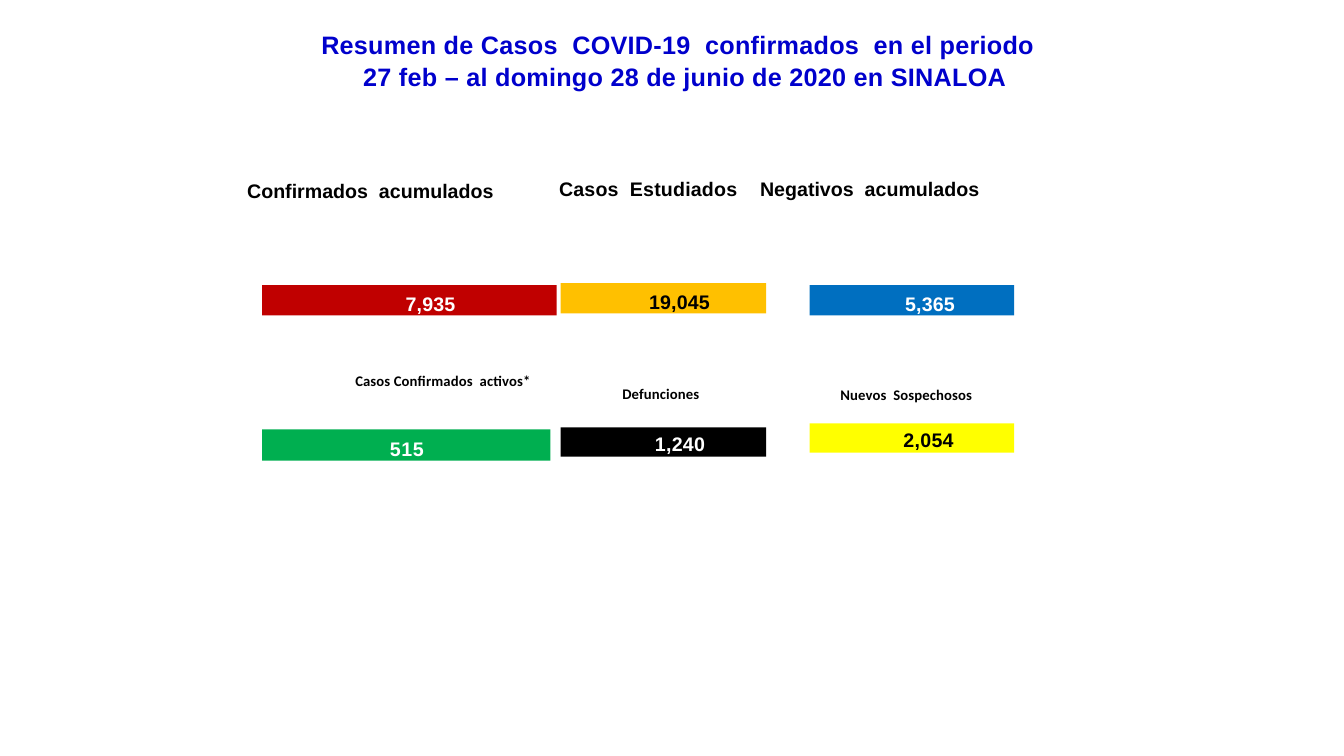
from pptx import Presentation
from pptx.dml.color import RGBColor
from pptx.enum.shapes import MSO_SHAPE as Shape
from pptx.enum.text import MSO_ANCHOR as Anchor, MSO_AUTO_SIZE as AutoSize, PP_ALIGN as Align
from pptx.util import Inches, Pt

BLACK, WHITE, TITLE_BLUE = "000000", "FFFFFF", "0000CC"


def rgb(hex_code):
    return RGBColor.from_string(hex_code)


def set_frame(frame, top_inset):
    frame.margin_left = frame.margin_right = frame.margin_bottom = 0
    frame.margin_top = Inches(top_inset)
    frame.vertical_anchor = Anchor.TOP
    frame.word_wrap = True
    frame.auto_size = AutoSize.SHAPE_TO_FIT_TEXT


def format_line(line, size, color, font="Arial", before=1, margin=0.0, indent=0.0,
                tracking=0.1, spacing=None):
    line.alignment = Align.CENTER
    line.space_before = Pt(before)
    line.line_spacing = spacing
    # Paragraph margins and letter spacing
    props = line._p.get_or_add_pPr()
    props.set("marL", str(Inches(margin)))
    props.set("indent", str(Inches(indent)))
    for run in line.runs:
        run.font.size = Pt(size)
        run.font.name = font
        run.font.bold = True
        run.font.color.rgb = rgb(color)
        run.font._element.set("spc", str(round(tracking * 100)))


def add_title(slide, lines):
    title = slide.shapes.add_textbox(Inches(1.07), Inches(0.27), Inches(11.19), Inches(0.64))
    frame = title.text_frame
    set_frame(frame, 0.02)
    frame.text = "\n".join(text for text, _ in lines)
    for line, (_, margin) in zip(frame.paragraphs, lines):
        format_line(line, 18, TITLE_BLUE, before=1.4, margin=margin, tracking=0.2)


def add_label(slide, text, place, size, font, **layout):
    label = slide.shapes.add_textbox(*map(Inches, place))
    set_frame(label.text_frame, 0.01)
    label.text_frame.text = text
    format_line(label.text_frame.paragraphs[0], size, BLACK, font, **layout)


def add_figure(slide, value, place, fill, color, top_inset, before, margin, tracking):
    bar = slide.shapes.add_shape(Shape.RECTANGLE, *map(Inches, place))
    bar.shadow.inherit = False
    bar.fill.solid()
    bar.fill.fore_color.rgb = rgb(fill)
    bar.line.fill.background()
    set_frame(bar.text_frame, top_inset)
    bar.text_frame.text = value
    format_line(bar.text_frame.paragraphs[0], 14, color, before=before,
                margin=margin, tracking=tracking)


def add_negatives_label(slide):
    """Heading that keeps to one line, aligned left."""
    label = slide.shapes.add_textbox(Inches(7.38), Inches(1.68), Inches(2.47), Inches(0.36))
    frame = label.text_frame
    frame.word_wrap = False
    frame.auto_size = AutoSize.SHAPE_TO_FIT_TEXT
    frame.text = "Negativos  acumulados"
    heading = frame.paragraphs[0]
    format_line(heading, 14, BLACK, before=0.9, margin=0.01, indent=0.05,
                tracking=0, spacing=1.1)
    heading.alignment = Align.LEFT


def main():
    deck = Presentation()
    deck.slide_width, deck.slide_height = Inches(13.33), Inches(7.5)
    slide = deck.slides.add_slide(deck.slide_layouts[6])

    # Title
    add_title(slide, [
        ("Resumen de Casos  COVID-19  confirmados  en el periodo", 0.12),
        ("27 feb – al domingo 28 de junio de 2020 en SINALOA", 0.26),
    ])

    # Upper row: headings of the cumulative totals
    add_label(slide, "Confirmados  acumulados", (2.29, 1.74, 2.75, 0.27), 14, "Arial",
              margin=0.04, indent=-0.02, tracking=0, spacing=1.1)
    add_label(slide, "Casos  Estudiados", (5.46, 1.75, 1.93, 0.25), 14, "Arial", margin=0.01)
    add_negatives_label(slide)

    # Lower row: headings of the current status
    add_label(slide, "Casos Confirmados  activos*", (2.94, 3.66, 2.9, 0.21), 10.5, "Calibri",
              margin=0.34, indent=-0.33, spacing=1.1)
    add_label(slide, "Defunciones", (5.72, 3.81, 1.66, 0.19), 10.5, "Calibri", margin=0.01)
    add_label(slide, "Nuevos  Sospechosos", (7.5, 3.8, 2.81, 0.2), 10.5, "Calibri",
              margin=0.01, indent=0.16, spacing=1.1)

    # Figures: value, place, fill, text colour, top inset, space before, margin, tracking
    figures = [
        ("7,935", (2.6, 2.83, 2.92, 0.3), "C00000", WHITE, 0.07, 4.8, 0.42, 0.1),
        ("19,045", (5.56, 2.81, 2.04, 0.3), "FFC000", BLACK, 0.07, 4.8, 0.32, 0.1),
        ("5,365", (8.03, 2.83, 2.03, 0.3), "006FC0", WHITE, 0.07, 4.8, 0.36, 0.1),
        ("515", (2.6, 4.26, 2.86, 0.31), "00AF50", WHITE, 0.07, 5.3, 0.01, 0.4),
        ("1,240", (5.56, 4.24, 2.04, 0.29), "000000", WHITE, 0.05, 3.9, 0.33, 0.2),
        ("2,054", (8.03, 4.2, 2.03, 0.29), "FFFF00", BLACK, 0.05, 3.9, 0.33, 0.2),
    ]
    for figure in figures:
        add_figure(slide, *figure)

    deck.save("out.pptx")


if __name__ == "__main__":
    main()
